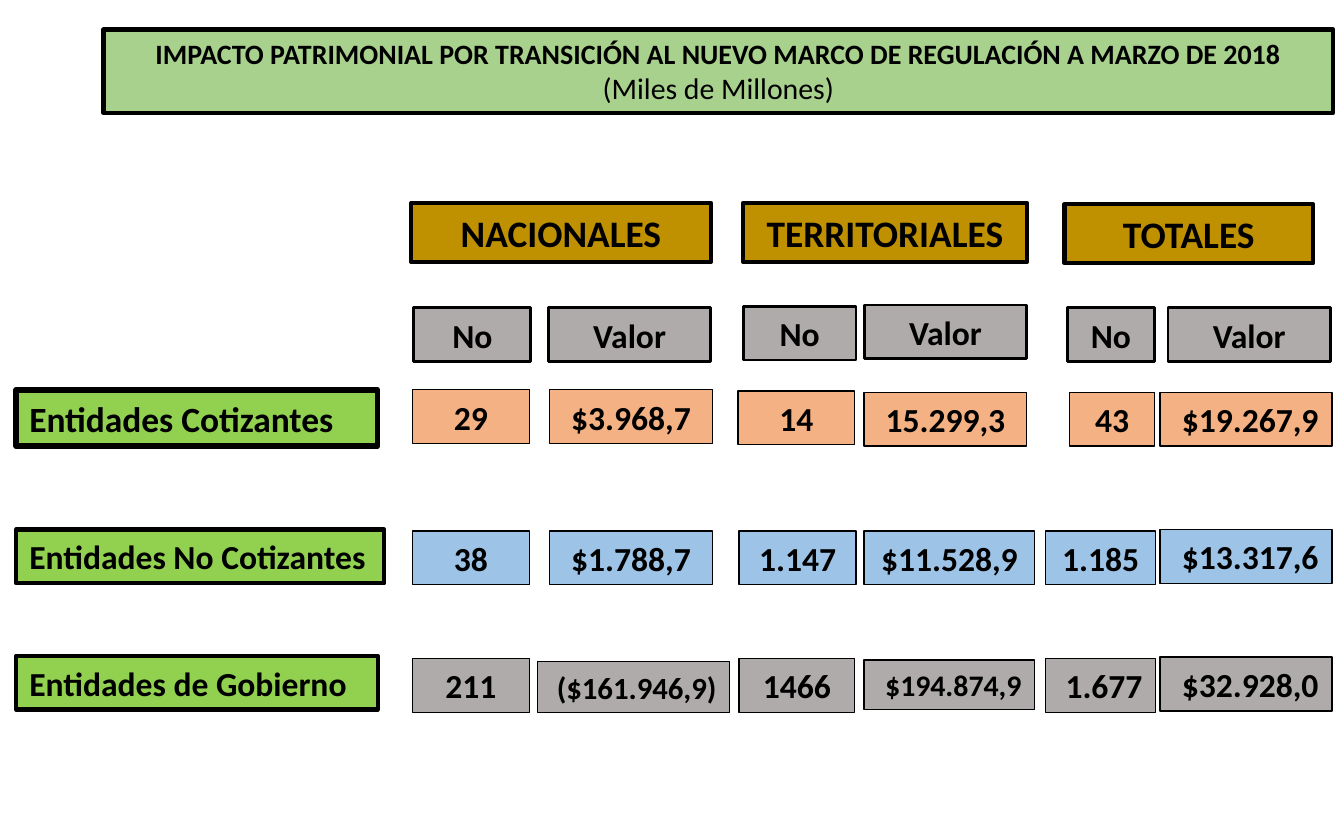
from pptx import Presentation
from pptx.dml.color import RGBColor
from pptx.enum.shapes import MSO_SHAPE
from pptx.enum.text import MSO_ANCHOR, MSO_AUTO_SIZE, PP_ALIGN as AL
from pptx.util import Inches, Pt

COLORS = {
    "black": "000000", "title": "A9D18E", "entity": "92D050", "group": "BF9000",
    "gray": "AFABAB", "orange": "F4B183", "blue": "9DC3E6",
}
GROUPS = [
    ("NACIONALES", (30.6, 15.1, 22.3)),
    ("TERRITORIALES", (55.3, 15.1, 21.1)),
    ("TOTALES", (79.2, 15.2, 18.5)),
]
HEADERS = [
    ("No", (30.8, 22.9, 8.7)), ("Valor", (40.8, 22.9, 12.1)),
    ("No", (55.3, 22.8, 8.4)), ("Valor", (64.3, 22.7, 12.1)),
    ("No", (79.4, 22.9, 6.5)), ("Valor", (86.9, 22.9, 12.1)),
]
ENTITIES = [
    ("Entidades Cotizantes", (1.2, 29, 26.9, 4.2), 19, 3),
    ("Entidades No Cotizantes", (1.2, 39.4, 27.4, 4), 18, 2.25),
    ("Entidades de Gobierno", (1.2, 48.8, 26.9, 4), 18, 2.25),
]
FIGURES = {
    "orange": [
        ("29", (30.7, 29, 8.7)), ("$3.968,7", (40.9, 29, 12.1)),
        ("14", (54.9, 29.1, 8.7)), ("15.299,3", (64.3, 29.2, 12.1)),
        ("43", (79.6, 29.2, 6.3)), ("$19.267,9", (86.3, 29.2, 12.8), AL.RIGHT),
    ],
    "blue": [
        ("38", (30.7, 39.5, 8.7)), ("$1.788,7", (40.9, 39.5, 12.1)),
        ("1.147", (55, 39.5, 8.7)), ("$11.528,9", (64.3, 39.5, 12.7)),
        ("1.185", (77.8, 39.5, 8.2)), ("$13.317,6", (86.3, 39.4, 12.8), AL.RIGHT),
    ],
    "gray": [
        ("211", (30.7, 49, 8.7)), ("($161.946,9)", (40, 49.2, 14.3, 3.8), AL.RIGHT, 16.5),
        ("1466", (55, 49, 8.6)), ("$194.874,9", (64.3, 49.1, 12.7, 3.7), AL.RIGHT, 16),
        ("1.677", (77.8, 49, 8.2), AL.RIGHT), ("$32.928,0", (86.3, 48.9, 12.8), AL.RIGHT),
    ],
}


class Board:
    """Draws styled boxes on a slide divided into 100 columns of square cells."""

    def __init__(self, prs):
        self.unit = prs.slide_width / 100
        self.font = {"name": "Calibri", "bold": True}
        self.frame = {"word_wrap": True, "auto_size": MSO_AUTO_SIZE.NONE,
                      "vertical_anchor": MSO_ANCHOR.MIDDLE}
        self.s = prs.slides.add_slide(prs.slide_layouts[5])

    def color(self, name):
        return RGBColor.from_string(COLORS[name])

    def cells(self, col, row, cols, rows=4):
        return [round(n * self.unit) for n in (col, row, cols, rows)]

    def paint(self, sp, fill, line):
        sp.fill.solid()
        sp.fill.fore_color.rgb = self.color(fill)
        sp.line.color.rgb = self.color("black")
        sp.line.width = Pt(line)
        for key, value in self.frame.items():
            setattr(sp.text_frame, key, value)

    def label(self, p, text, align, **font):
        p.alignment = align
        p.line_spacing = 1.0
        r = p.add_run()
        r.text = text
        for key, value in {**self.font, **font}.items():
            setattr(r.font, key, value)
        r.font.color.rgb = self.color("black")

    def title(self, text, subtitle, place):
        sp = self.s.shapes.title
        sp.left, sp.top, sp.width, sp.height = self.cells(*place)
        self.paint(sp, "title", 2.25)
        tf = sp.text_frame
        self.label(tf.paragraphs[0], text, AL.CENTER, size=Pt(15))
        self.label(tf.add_paragraph(), subtitle, AL.CENTER, size=Pt(16), bold=False)

    def box(self, text, place, fill, align=AL.CENTER, size=18, line=0.75):
        sp = self.s.shapes.add_shape(MSO_SHAPE.RECTANGLE, *self.cells(*place))
        sp.shadow.inherit = False
        self.paint(sp, fill, line)
        self.label(sp.text_frame.paragraphs[0], text, align, size=Pt(size))


def main():
    prs = Presentation()
    prs.slide_width, prs.slide_height = Inches(10), Inches(6.25)
    board = Board(prs)
    board.title("IMPACTO PATRIMONIAL POR TRANSICIÓN AL NUEVO MARCO DE REGULACIÓN A MARZO DE 2018",
                "(Miles de Millones)", (7.7, 2.2, 91.5, 6.2))
    for text, place, size, line in ENTITIES:
        board.box(text, place, "entity", AL.LEFT, size, line)
    for text, place in GROUPS:
        board.box(text, (*place, 4.4), "group", size=20, line=2.25)
    for text, place in HEADERS:
        board.box(text, place, "gray", line=1.5)
    for fill, figures in FIGURES.items():
        for text, place, *style in figures:
            board.box(text, place, fill, *style)
    prs.save("out.pptx")


if __name__ == "__main__":
    main()
